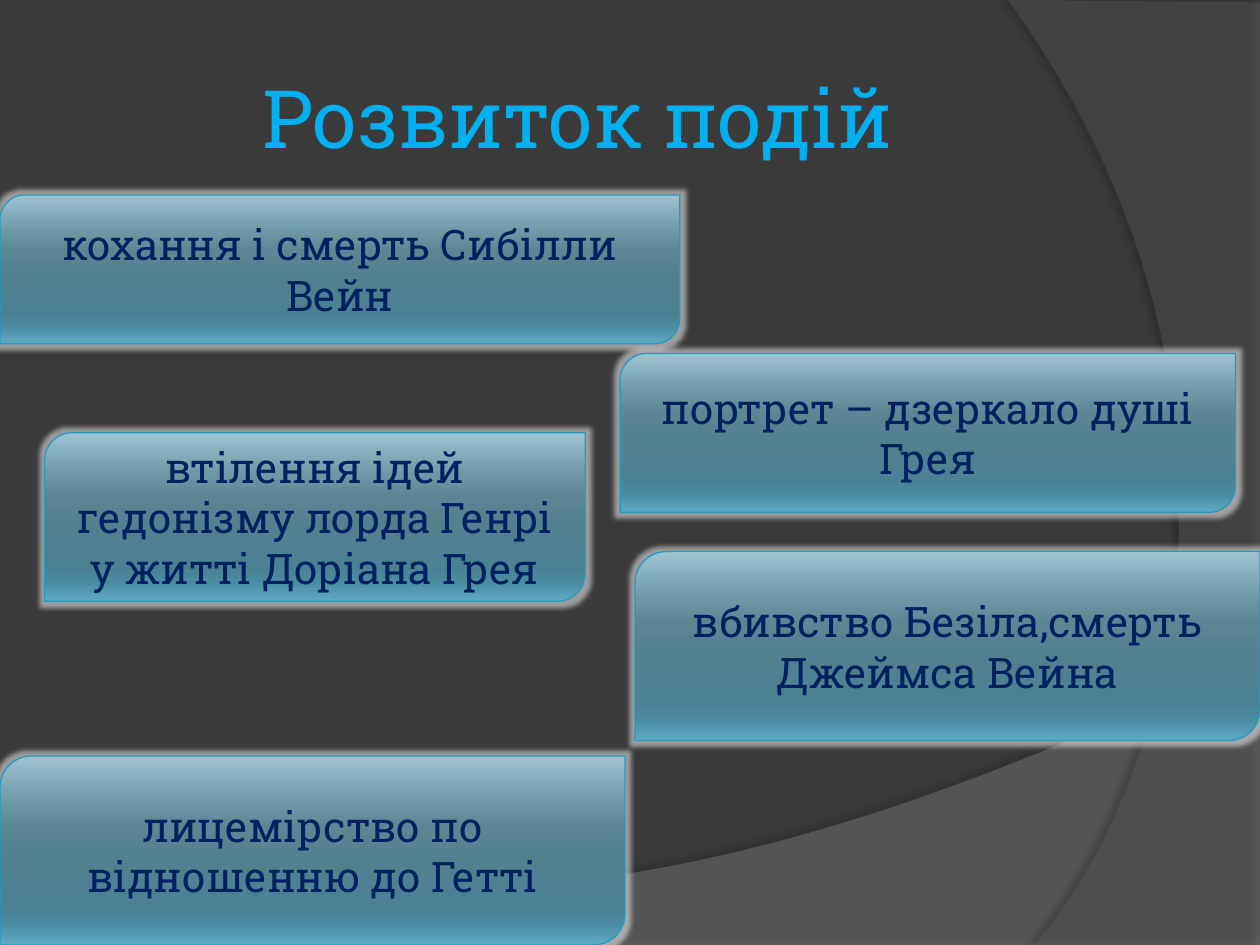
from pptx import Presentation
from pptx.dml.color import RGBColor
from pptx.enum.shapes import MSO_SHAPE as Shape
from pptx.enum.text import MSO_ANCHOR as Anchor, PP_ALIGN as Align
from pptx.oxml import parse_xml
from pptx.oxml.ns import nsdecls, qn
from pptx.util import Pt

COLORS = {
    "bottom wave": "7F7F7F", "right wave": "5E5E5E", "background": "3B3B3B",
    "shadow": "000000", "title": "00B0F0", "card text": "002060",
    "card line": "239BC2", "glow": "FFFFFF",
}
CARD_GRADIENT = {0: "9EC4D2", 25: "6C97A5", 38: "5B8694", 55: "51808F",
                 80: "4A8294", 88: "4A8BA0", 100: "5DAAC2"}
TITLE_FORMAT = {"name": "Roboto Slab", "size": Pt(46)}
CARD_FORMAT = {"name": "Roboto Slab", "size": Pt(24)}
CURVE_STEPS = 48


def color_xml(color, alpha=100):
    return (f'<a:srgbClr {nsdecls("a")} val="{color}">'
            f'<a:alpha val="{alpha * 1000}"/></a:srgbClr>')


def write_text(shape, text, font_format, color):
    """Put one centred paragraph in the middle of the shape."""
    frame = shape.text_frame
    frame.word_wrap = True
    frame.vertical_anchor = Anchor.MIDDLE
    paragraph = frame.paragraphs[0]
    paragraph.alignment = Align.CENTER
    run = paragraph.add_run()
    run.text = text
    for name, value in font_format.items():
        setattr(run.font, name, value)
    run.font.color.rgb = RGBColor.from_string(color)


presentation = Presentation()
presentation.slide_width, presentation.slide_height = Pt(720), Pt(540)
slide = presentation.slides.add_slide(presentation.slide_layouts[6])
slide.background.fill.solid()
slide.background.fill.fore_color.rgb = RGBColor.from_string(COLORS["background"])

# Background waves: straight corners, Bezier control points, closing corners,
# fill opacity, then shadow opacity, blur, distance and direction
waves = [
    ("bottom wave", [(0, 507.6), (0, 540), (720, 540)],
     [(720, 374.4), (402.5, 524.9), (281.5, 517.7), (0, 507.6)], [],
     45, (35, 4, 3.5, 270)),
    ("right wave", [(720, 1.4), (720, 540)],
     [(591.1, 540), (673.2, 445.7), (733, 216), (576, 0)], [],
     40, (45, 4, 4, 180)),
]
for name, start, curve, end, opacity, shadow in waves:
    points = list(start)
    for step in range(CURVE_STEPS + 1):
        t = step / CURVE_STEPS
        weights = ((1 - t) ** 3, 3 * t * (1 - t) ** 2, 3 * t * t * (1 - t), t ** 3)
        points.append(tuple(sum(w * point[axis] for w, point in zip(weights, curve))
                            for axis in (0, 1)))
    points = [(Pt(x), Pt(y)) for x, y in points + end]
    builder = slide.shapes.build_freeform(*points[0])
    builder.add_line_segments(points[1:], close=True)
    wave = builder.convert_to_shape()
    wave.line.fill.background()
    wave.fill.solid()
    wave.fill.fore_color.rgb = RGBColor.from_string(COLORS[name])
    solid = wave._element.spPr.find(qn("a:solidFill"))
    solid.replace(solid[0], parse_xml(color_xml(COLORS[name], opacity)))
    wave.shadow.inherit = False
    alpha, blur, distance, direction = shadow
    wave._element.spPr.find(qn("a:effectLst")).append(parse_xml(
        f'<a:outerShdw {nsdecls("a")} blurRad="{Pt(blur)}" dist="{Pt(distance)}" '
        f'dir="{direction * 60000}" algn="ctr" rotWithShape="0">'
        f'{color_xml(COLORS["shadow"], alpha)}</a:outerShdw>'))

title = slide.shapes.add_textbox(Pt(36), Pt(21.6), Pt(588), Pt(90))
for side in ("left", "right", "top", "bottom"):
    setattr(title.text_frame, f"margin_{side}", Pt(3.6))
write_text(title, "Розвиток подій", TITLE_FORMAT, COLORS["title"])

# Event cards: left, top, width, height
cards = [
    ("кохання і смерть Сибілли Вейн", 0, 111.4, 388.4, 85),
    ("втілення ідей гедонізму лорда Генрі у житті Доріана Грея",
     25.4, 247.2, 309, 96.4),
    ("портрет – дзеркало душі Грея", 354.4, 202, 351.6, 90.8),
    ("вбивство Безіла,смерть Джеймса Вейна", 362.8, 315.2, 357.2, 108),
    ("лицемірство по відношенню до Гетті", 0, 432, 357.2, 108),
]
for text, *box in cards:
    card = slide.shapes.add_shape(Shape.ROUND_2_DIAG_RECTANGLE, *map(Pt, box))
    card.fill.gradient()
    card.fill.gradient_angle = 270
    stops = card._element.spPr.find(qn("a:gradFill")).find(qn("a:gsLst"))
    stops.clear()
    for position, color in CARD_GRADIENT.items():
        stops.append(parse_xml(f'<a:gs {nsdecls("a")} pos="{position * 1000}">'
                               f'{color_xml(color)}</a:gs>'))
    card.line.width = Pt(0.75)
    card.line.color.rgb = RGBColor.from_string(COLORS["card line"])
    card.shadow.inherit = False
    card._element.spPr.find(qn("a:effectLst")).append(parse_xml(
        f'<a:glow {nsdecls("a")} rad="{Pt(5.5)}">'
        f'{color_xml(COLORS["glow"], 50)}</a:glow>'))
    write_text(card, text, CARD_FORMAT, COLORS["card text"])

presentation.save("out.pptx")
